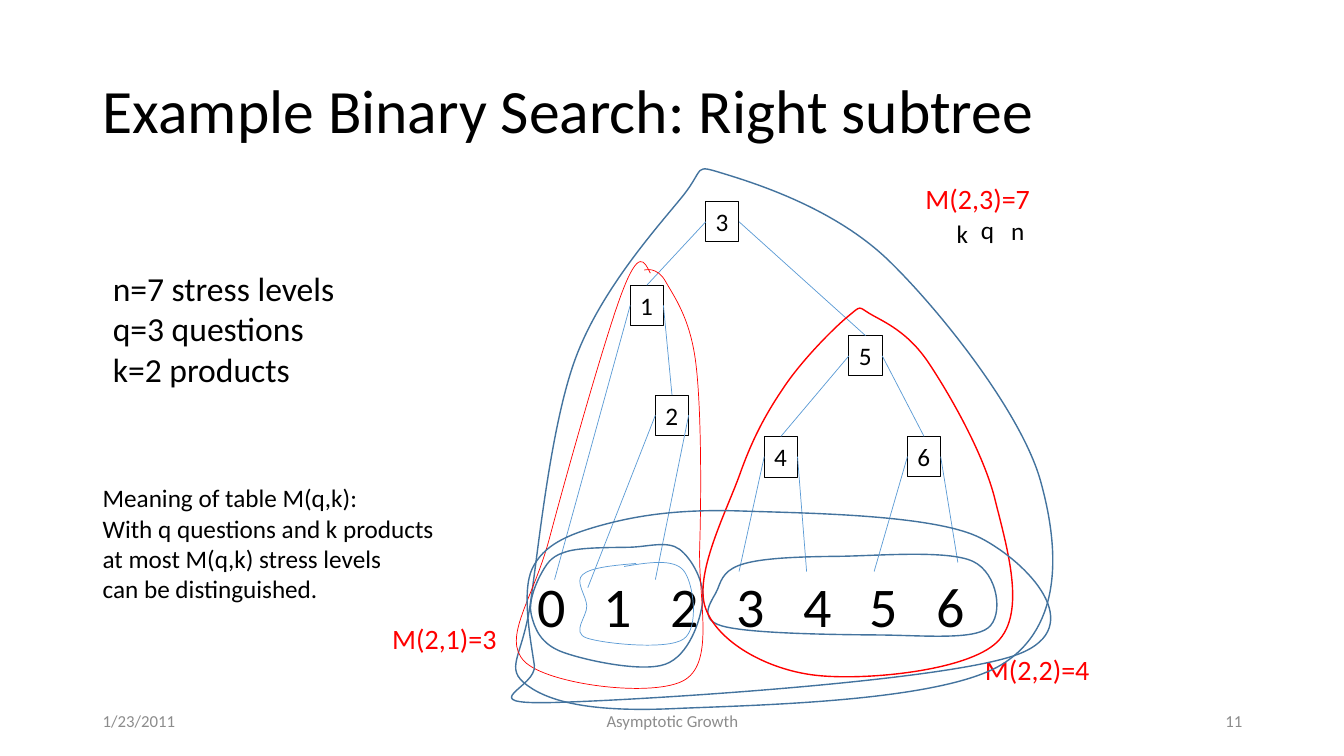
"""Build the slide on the right subtree of a binary search tree."""
import pptx
import pptx.dml.color
import pptx.enum.shapes
import pptx.enum.text
import pptx.oxml.ns
import pptx.util
from lxml import etree
from pptx.util import Inches

qn = pptx.oxml.ns.qn
ALIGN = pptx.enum.text.PP_ALIGN
ANCHOR = pptx.enum.text.MSO_ANCHOR

theme = {
    "font": "Calibri",
    "ink": "000000", "accent": "FF0000", "outline": "43739E", "edge": "5B9BD5", "footer": "8C8C8C",
    "title": 44, "levels": 40, "facts": 24, "value": 20, "body": 18, "small": 12,
}


def write(frame, lines, size, color, paragraph_format=None, **frame_format):
    """Fill a text frame with one paragraph per line."""
    settings = {"word_wrap": True, "vertical_anchor": ANCHOR.TOP, **frame_format}
    for attribute, value in settings.items():
        setattr(frame, attribute, value)
    frame.text = "\n".join(lines)
    for paragraph in frame.paragraphs:
        for attribute, value in {"alignment": ALIGN.LEFT, **(paragraph_format or {})}.items():
            setattr(paragraph, attribute, value)
        font = paragraph.runs[0].font
        for attribute, value in {"name": theme["font"], "size": pptx.util.Pt(theme[size])}.items():
            setattr(font, attribute, value)
        font.color.rgb = pptx.dml.color.RGBColor.from_string(theme[color])


def stroke(line, color, width):
    """Give a line its colour and its width in points."""
    line.color.rgb = pptx.dml.color.RGBColor.from_string(theme[color])
    line.width = pptx.util.Pt(width)


deck = pptx.Presentation()
deck.slide_width, deck.slide_height = Inches(13.33), Inches(7.5)
slide = deck.slides.add_slide(deck.slide_layouts[6])
shapes = slide.shapes

middle = {"vertical_anchor": ANCHOR.MIDDLE}
loose = {"word_wrap": False}
texts = [
    ((0.92, 0.4, 11.5, 1.45), ["Example Binary Search: Right subtree"], "title", "ink",
     {"line_spacing": 0.9}, middle),
    ((1.02, 2.61, 3.38, 1.31), ["n=7 stress levels", "q=3 questions", "k=2 products"],
     "facts", "ink", {}, {}),
    ((0.92, 4.74, 3.53, 1.31),
     ["Meaning of table M(q,k):", "With q questions and k products",
      "at most M(q,k) stress levels", "can be distinguished."], "body", "ink", {}, loose),
    ((9.08, 1.75, 1.25, 0.44), ["M(2,3)=7"], "value", "accent", {}, loose),
    ((9.67, 6.42, 1.25, 0.44), ["M(2,2)=4"], "value", "accent", {}, loose),
    ((3.79, 6.12, 1.25, 0.44), ["M(2,1)=3"], "value", "accent", {}, loose),
    ((9.39, 2.12, 0.31, 0.4), ["k"], "body", "ink", {}, loose),
    ((9.63, 2.08, 0.34, 0.4), ["q"], "body", "ink", {}, loose),
    ((9.93, 2.09, 0.34, 0.4), ["n"], "body", "ink", {}, loose),
    ((0.92, 6.95, 3, 0.4), ["1/23/2011"], "small", "footer", {}, middle),
    ((4.42, 6.95, 4.5, 0.4), ["Asymptotic Growth"], "small", "footer",
     {"alignment": ALIGN.CENTER}, middle),
    ((9.42, 6.95, 3, 0.4), ["11"], "small", "footer", {"alignment": ALIGN.RIGHT}, middle),
]
for place, lines, size, color, paragraph_format, frame_format in texts:
    box = shapes.add_textbox(*map(Inches, place))
    write(box.text_frame, lines, size, color, paragraph_format, **frame_format)

level_count, level_pitch = 7, 0.66
level_row = shapes.add_textbox(*map(Inches, (5.23, 5.62, 4.59, 0.77))).text_frame
write(level_row, ["\t".join(str(level) for level in range(level_count))], "levels", "ink")
tab_stops = etree.SubElement(level_row.paragraphs[0]._p.get_or_add_pPr(), qn("a:tabLst"))
for stop in range(1, level_count):
    etree.SubElement(tab_stops, qn("a:tab"), pos=str(Inches(stop * level_pitch)), algn="l")

node_width, node_height = 0.33, 0.4
nodes = {
    3: (7, 2, 0.75), 1: (6.25, 2.83, 0.25), 2: (6.5, 3.92, 0.75),
    5: (8.42, 3.33, 0.75), 4: (7.58, 4.33, 0.25), 6: (9, 4.33, 0.75),
}
for label, (left, top, line_width) in nodes.items():
    node = shapes.add_shape(pptx.enum.shapes.MSO_SHAPE.RECTANGLE,
                            *map(Inches, (left, top, node_width, node_height)))
    node.shadow.inherit = False
    node.fill.background()
    stroke(node.line, "ink", line_width)
    write(node.text_frame, [str(label)], "body", "ink", word_wrap=False)

branches = {
    3: (1, 5), 1: ((5.5, 5.75), 2), 2: ((5.83, 5.83), (6.5, 5.75)),
    5: (4, 6), 4: ((7.33, 5.67), (8, 5.67)), 6: ((8.67, 5.67), (9.5, 5.58)),
}
for parent, children in branches.items():
    left, top, _ = nodes[parent]
    for side, child in enumerate(children):
        if child in nodes:
            end = (nodes[child][0] + node_width / 2, nodes[child][1])
        else:
            end = child
        start = (left + side * node_width, top + node_height / 2)
        edge = shapes.add_connector(pptx.enum.shapes.MSO_CONNECTOR.STRAIGHT,
                                    *map(Inches, start + end))
        stroke(edge.line, "edge", 0.5)
        etree.SubElement(edge._element.spPr, qn("a:effectLst"))

loops = [
    ("outline", 1, True, [(8.3, 5.52), (7.39, 5.59), (7.12, 5.84), (7.16, 6.21), (8.71, 6.3),
                          (9.8, 6.23), (9.65, 5.57)]),
    ("edge", 0.5, False, [(7.16, 5.58), (6.31, 5.59), (5.78, 5.7), (5.82, 6.01), (5.82, 6.33),
                          (6.78, 6.34), (6.78, 5.66), (6.19, 5.62), (5.34, 5.9)]),
    ("outline", 1, True, [(6.24, 5.43), (5.63, 5.47), (5.38, 5.67), (5.27, 6.1), (5.58, 6.47),
                          (6.6, 6.59), (6.97, 5.97), (6.74, 5.45)]),
    ("outline", 1, True, [(7.2, 1.73), (6.76, 1.96), (5.71, 3.55), (5.26, 5.99), (5.23, 6.8),
                          (6.68, 7.03), (9.94, 6.59), (10.32, 4.77), (8.82, 2.59)]),
    ("accent", 1, True, [(8.41, 3.14), (7.79, 3.82), (7.34, 4.7), (7, 6.04), (8.09, 6.7),
                         (9.89, 6.37), (9.87, 4.96), (9.21, 3.6), (8.64, 3.12)]),
    ("accent", 0.5, False, [(6.53, 3.62), (6.45, 2.71), (6.17, 2.9), (5.45, 5.34), (5.2, 6.56),
                            (6.8, 6.74), (6.94, 5.42), (6.9, 3.59), (6.6, 2.79), (6.39, 2.68),
                            (6.6, 2.79)]),
    ("outline", 1, True, [(7.36, 5.07), (5.97, 5.21), (5.28, 5.64), (5.3, 6.6), (5.47, 6.97),
                          (10.1, 6.49), (9.73, 5.34)]),
]
for color, line_width, closed, points in loops:
    guided = [points[-1], *points, *points[:2]] if closed else points
    controls = []
    for before, start, end, after in zip(guided, guided[1:], guided[2:], guided[3:]):
        leaving = [s + (e - b) / 6 for b, s, e in zip(before, start, end)]
        arriving = [e - (a - s) / 6 for s, e, a in zip(start, end, after)]
        controls += [tuple(map(Inches, point)) for point in (leaving, arriving, end)]
    builder = shapes.build_freeform(*map(Inches, guided[1]))
    builder.add_line_segments(controls, close=closed)
    loop = builder.convert_to_shape()
    loop.shadow.inherit = False
    loop.fill.background()
    stroke(loop.line, color, line_width)
    segments = list(loop._element.iter(qn("a:lnTo")))
    for first in range(0, len(segments), 3):
        curve = etree.Element(qn("a:cubicBezTo"))
        segments[first].addprevious(curve)
        for segment in segments[first:first + 3]:
            curve.append(segment[0])
            segment.getparent().remove(segment)

deck.save("out.pptx")
